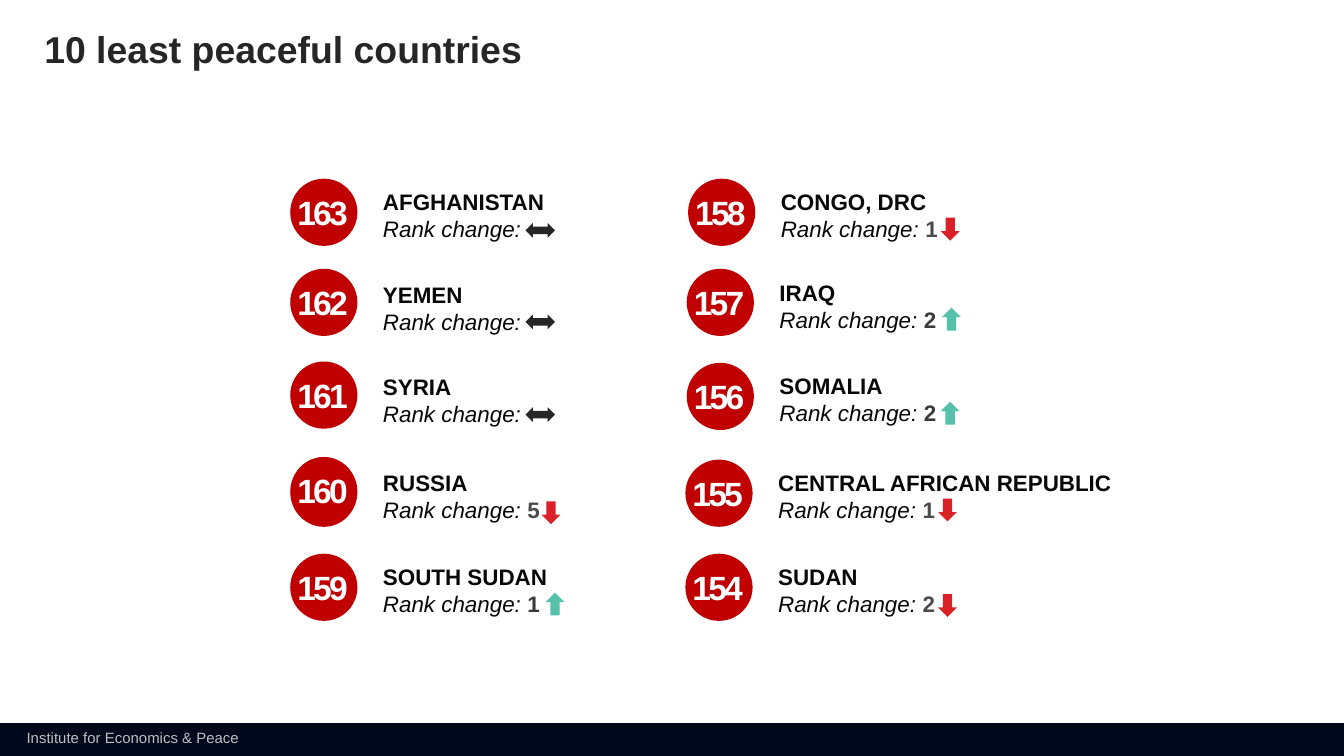
from dataclasses import dataclass
from pptx import Presentation
from pptx.dml.color import RGBColor as Rgb
from pptx.enum.shapes import MSO_SHAPE as Shape
from pptx.enum.text import MSO_ANCHOR as Anchor, PP_ALIGN as Align
from pptx.util import Inches, Pt

HUES = {"navy": "00081C", "foot": "BFBFBF", "title": "262626", "disc": "C00000",
        "white": "FFFFFF", "ink": "080808", "flat": "262626", "up": "55C1AA",
        "down": "DA2128", "rise": "3A3A3A", "fall": "4B4B4B"}
DISC = 0.5


@dataclass
class Entry:
    rank: int
    name: str
    x: float        # disc left
    y: float        # disc top
    drop: float     # label top below disc top
    move: int       # rank change, negative for a fall
    mark: tuple[float, float]   # arrow left and top
    width: float = 1.4
    tall: float = DISC


ENTRIES = [
    Entry(163, "AFGHANISTAN", 2.16, 1.33, 0.03, 0, (3.91, 1.66)),
    Entry(162, "YEMEN", 2.16, 2.0, 0.05, 0, (3.91, 2.34)),
    Entry(161, "SYRIA", 2.16, 2.69, 0.05, 0, (3.91, 3.03)),
    Entry(160, "RUSSIA", 2.16, 3.4, 0.05, -5, (4.03, 3.73), tall=0.52),
    Entry(159, "SOUTH SUDAN", 2.16, 4.12, 0.03, 1, (4.06, 4.41)),
    Entry(158, "CONGO, DRC", 5.12, 1.33, 0.03, -1, (7.0, 1.62), 1.78),
    Entry(157, "IRAQ", 5.11, 2.0, 0.04, 2, (7.01, 2.29)),
    Entry(156, "SOMALIA", 5.11, 2.7, 0.03, 2, (7.0, 2.99)),
    Entry(155, "CENTRAL AFRICAN REPUBLIC", 5.1, 3.42, 0.03, -1, (6.98, 3.71), 2.71),
    Entry(154, "SUDAN", 5.1, 4.12, 0.03, -2, (6.98, 4.42), 2.71),
]


def style(run, size: float, hue: str, bold: bool = False, italic: bool = False) -> None:
    font = run.font
    font.name, font.size, font.bold, font.italic = "Arial", Pt(size), bold, italic
    font.color.rgb = Rgb.from_string(HUES[hue])


def add_shape(shapes, kind, x: float, y: float, w: float, h: float, hue: str):
    shape = shapes.add_shape(kind, Inches(x), Inches(y), Inches(w), Inches(h))
    shape.shadow.inherit = False
    shape.fill.solid()
    shape.fill.fore_color.rgb = Rgb.from_string(HUES[hue])
    shape.line.fill.background()
    return shape


def add_text(shapes, x: float, y: float, w: float, h: float, text: str, wrap: bool = True):
    frame = shapes.add_textbox(Inches(x), Inches(y), Inches(w), Inches(h)).text_frame
    frame.word_wrap = wrap
    frame.text = text
    return frame


def add_label(shapes, entry: Entry) -> None:
    text = f"{entry.name}\nRank change:" + (" " if entry.move else "")
    frame = add_text(shapes, entry.x + 0.61, entry.y + entry.drop, entry.width, 0.48, text)
    frame.margin_left = frame.margin_right = Inches(0.08)
    frame.margin_top = frame.margin_bottom = Inches(0.04)
    name, change = frame.paragraphs
    style(name.runs[0], 12, "ink", bold=True)
    style(change.runs[0], 12, "ink", italic=True)
    if entry.move:
        run = change.add_run()
        run.text = str(abs(entry.move))
        style(run, 12, "rise" if entry.move > 0 else "fall", bold=True)


def add_rank(shapes, entry: Entry) -> None:
    add_shape(shapes, Shape.OVAL, entry.x, entry.y, DISC, entry.tall, "disc")
    width = 0.75
    left = entry.x + (DISC - width) / 2 - 0.01
    frame = add_text(shapes, left, entry.y + 0.05, width, 0.4, str(entry.rank))
    para = frame.paragraphs[0]
    para.alignment = Align.CENTER
    run = para.runs[0]
    style(run, 18, "white", bold=True)
    run.font._element.set("spc", "-150")


def add_mark(shapes, entry: Entry) -> None:
    if entry.move == 0:
        add_shape(shapes, Shape.LEFT_RIGHT_ARROW, *entry.mark, 0.22, 0.11, "flat")
        return
    hue = "up" if entry.move > 0 else "down"
    arrow = add_shape(shapes, Shape.UP_ARROW, *entry.mark, 0.14, 0.17, hue)
    if entry.move < 0:
        arrow.rotation = 180


def main() -> None:
    deck = Presentation()
    deck.slide_width = Inches(10)
    deck.slide_height = Inches(10 * 9 / 16)    # 16:9
    slide = deck.slides.add_slide(deck.slide_layouts[5])

    # Footer bar
    add_shape(slide.shapes, Shape.RECTANGLE, 0, 5.38, 10, 0.25, "navy")
    foot = add_text(slide.shapes, 0.1, 5.37, 1.8, 0.24,
                    "Institute for Economics & Peace", wrap=False)
    style(foot.paragraphs[0].runs[0], 8, "foot")

    # Title
    title = slide.shapes.title
    title.left, title.top = Inches(0.33), Inches(0.23)
    title.width, title.height = Inches(4.44), Inches(0.3)
    frame = title.text_frame
    frame.text = "10 least peaceful countries"
    frame.margin_left = frame.margin_right = frame.margin_top = frame.margin_bottom = 0
    frame.vertical_anchor = Anchor.MIDDLE
    para = frame.paragraphs[0]
    para.alignment, para.line_spacing = Align.LEFT, 0.9
    style(para.runs[0], 20, "title", bold=True)

    # Ranked countries, one group each
    for entry in ENTRIES:
        shapes = slide.shapes.add_group_shape().shapes
        add_label(shapes, entry)
        add_rank(shapes, entry)
        add_mark(shapes, entry)

    deck.save("out.pptx")


if __name__ == "__main__":
    main()
